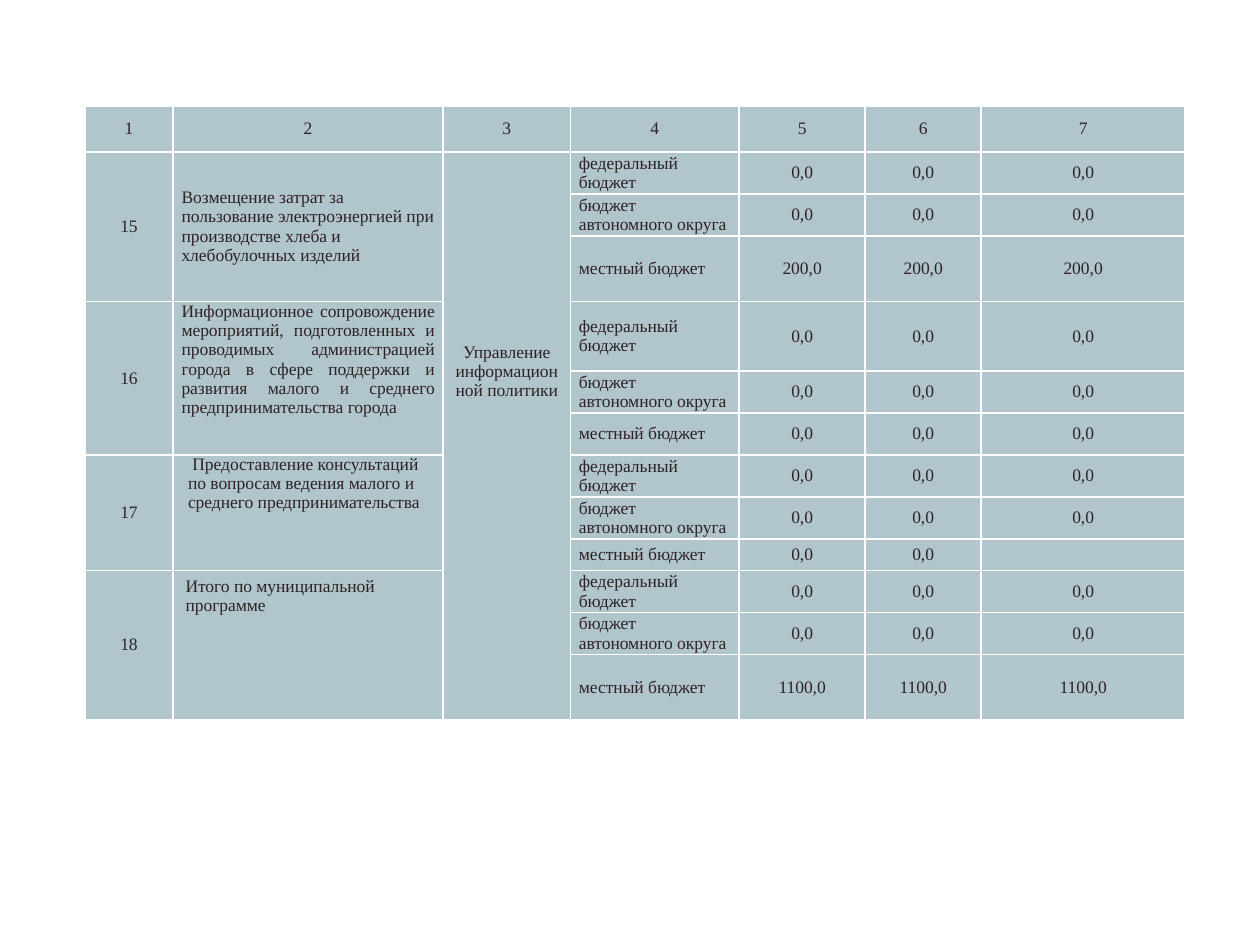
import pptx
import pptx.dml.color
import pptx.enum.text
import pptx.util
import lxml.etree

Cm = pptx.util.Cm
ALIGN = pptx.enum.text.PP_ALIGN
ANCHOR = pptx.enum.text.MSO_ANCHOR
COLORS = {"cell": "B1C5CC", "text": "2E2224"}
COLUMNS = [1.78, 5.44, 2.57, 3.4, 2.54, 2.34, 4.11]
ROWS = [0.92, 0.85, 0.85, 1.32, 1.4, 0.85, 0.84, 0.85, 0.85, 0.63, 0.85, 0.85, 1.31]
BUDGETS = ["федеральный бюджет", "бюджет автономного округа", "местный бюджет"]
ZEROS = ["0,0"] * 3
DEPARTMENT = "Управление информационной политики"
MEASURES = [
    ("15", "Возмещение затрат за пользование электроэнергией при производстве хлеба "
     "и хлебобулочных изделий", [ZEROS, ZEROS, ["200,0"] * 3], {"anchor": ANCHOR.MIDDLE}),
    ("16", "Информационное сопровождение мероприятий, подготовленных и проводимых "
     "администрацией города в сфере поддержки и развития малого и среднего "
     "предпринимательства города", [ZEROS, ZEROS, ZEROS], {"align": ALIGN.JUSTIFY}),
    ("17", " Предоставление консультаций по вопросам ведения малого и среднего "
     "предпринимательства", [ZEROS, ZEROS, ["0,0", "0,0", ""]], {"side": 0.3}),
    ("18", "Итого по муниципальной программе", [ZEROS, ZEROS, ["1100,0"] * 3],
     {"side": 0.25, "top": 0.13}),
]


class Deck:
    """Holds the text style and the current slide."""

    def __init__(self, prs, font="Times New Roman", size=10):
        self.s = prs.slides.add_slide(prs.slide_layouts[6])
        self.font, self.size = font, size

    def table(self, left, top, columns, rows):
        shape = self.s.shapes.add_table(len(rows), len(columns), Cm(left), Cm(top),
                                        Cm(sum(columns)), Cm(sum(rows)))
        table = shape.table
        table.horz_banding = False
        for column, width in zip(table.columns, columns):
            column.width = Cm(width)
        for row, height in zip(table.rows, rows):
            row.height = Cm(height)
        for cell in table.iter_cells():
            self.cell(cell)
        return table

    def cell(self, cell, text="", align=ALIGN.CENTER, anchor=ANCHOR.MIDDLE, side=0.17, top=0):
        cell.fill.solid()
        cell.fill.fore_color.rgb = pptx.dml.color.RGBColor.from_string(COLORS["cell"])
        cell.margin_left = cell.margin_right = Cm(side)
        cell.margin_top, cell.margin_bottom = Cm(top), 0
        cell.vertical_anchor = anchor
        p = cell.text_frame.paragraphs[0]
        p.alignment = align
        for end in p._p.findall(pptx.oxml.ns.qn("a:endParaRPr")):
            p._p.remove(end)
        if text:
            r = p.add_run()
            r.text = text
            r.font.name, r.font.size, r.font.bold = self.font, pptx.util.Pt(self.size), False
            r.font.color.rgb = pptx.dml.color.RGBColor.from_string(COLORS["text"])
        else:
            end = lxml.etree.SubElement(p._p, pptx.oxml.ns.qn("a:endParaRPr"))
            end.set("sz", str(self.size * 100))


def main():
    prs = pptx.Presentation()
    prs.slide_width, prs.slide_height = Cm(25.4), Cm(19.05)
    deck = Deck(prs)
    table = deck.table(1.71, 2.14, COLUMNS, ROWS)
    for j in range(len(COLUMNS)):
        deck.cell(table.cell(0, j), str(j + 1))
    table.cell(1, 2).merge(table.cell(len(ROWS) - 1, 2))
    deck.cell(table.cell(1, 2), DEPARTMENT, anchor=ANCHOR.TOP, top=3.85)
    for k, (number, title, amounts, style) in enumerate(MEASURES):
        first = 1 + k * len(BUDGETS)
        for j in (0, 1):
            table.cell(first, j).merge(table.cell(first + len(BUDGETS) - 1, j))
        deck.cell(table.cell(first, 0), number)
        deck.cell(table.cell(first, 1), title,
                  **{"align": ALIGN.LEFT, "anchor": ANCHOR.TOP, **style})
        for i, (budget, values) in enumerate(zip(BUDGETS, amounts), first):
            deck.cell(table.cell(i, 3), budget, align=ALIGN.LEFT)
            for j, value in enumerate(values, 4):
                deck.cell(table.cell(i, j), value)
    prs.save("out.pptx")


if __name__ == "__main__":
    main()
